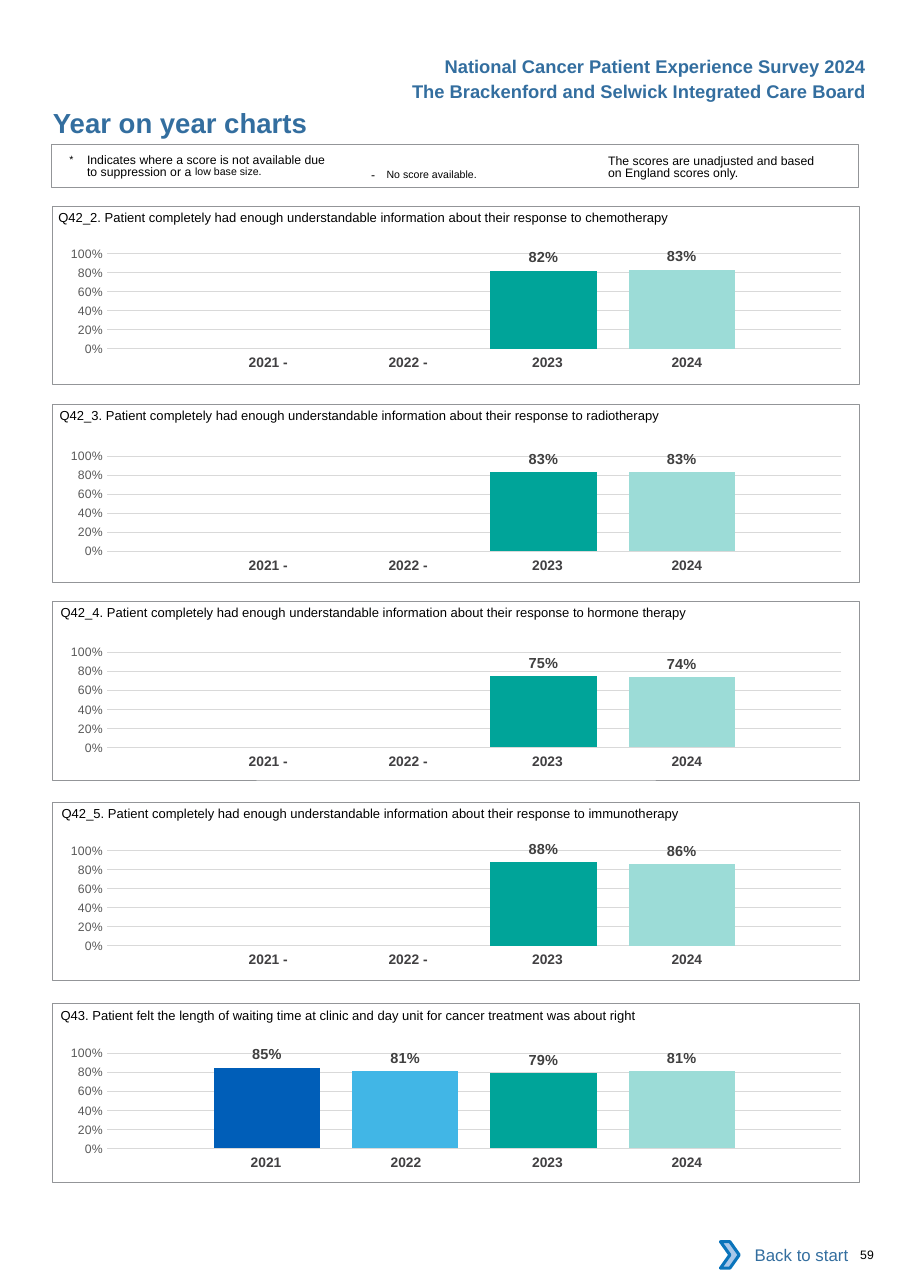
"""Build the year on year charts page of a patient experience survey."""
from lxml.etree import SubElement
from pptx import Presentation
from pptx.chart.data import CategoryChartData
from pptx.dml.color import RGBColor
from pptx.enum.chart import XL_CHART_TYPE as CHART, XL_LABEL_POSITION as LABEL, XL_TICK_MARK as TICK
from pptx.enum.shapes import MSO_SHAPE as SHAPE
from pptx.enum.text import MSO_ANCHOR as ANCHOR, PP_ALIGN as ALIGN
from pptx.oxml import parse_xml
from pptx.oxml.ns import nsdecls, qn
from pptx.util import Inches, Pt

CELL = Inches(0.1)
COLS, ROWS = 82.6, 116.9
PANEL_LEFT, PANEL_W, PANEL_H = 4.8, 73.2, 16.2
CHART_LEFT, CHART_H, YEARS_DROP = 3.9, 12.9, 10.55
YEARS_LEFT, YEAR_COLS, YEAR_H = 17.3, (12.7, 12.7, 13.4, 12.7), 2.7
PLOT = {"x": 0.08, "y": 0.14, "w": 0.91, "h": 0.67}

BLACK = RGBColor(0, 0, 0)
WHITE = RGBColor(255, 255, 255)
HEADING = RGBColor(0x33, 0x6E, 0x9F)
FRAME = RGBColor(0x93, 0x95, 0x98)
YEAR = RGBColor(0x41, 0x40, 0x42)
AXIS = RGBColor(0x59, 0x59, 0x59)
LABELS = RGBColor(0x40, 0x40, 0x40)
GRID = RGBColor(0xD9, 0xD9, 0xD9)
CHEVRON = RGBColor(0xA8, 0xC7, 0xE9)
CHEVRON_LINE = RGBColor(0x0A, 0x74, 0xBB)
BARS = (RGBColor(0x00, 0x5E, 0xB8), RGBColor(0x41, 0xB6, 0xE6),
        RGBColor(0x00, 0xA4, 0x99), RGBColor(0x9C, 0xDC, 0xD7))

INFO = "Patient completely had enough understandable information about their response to "
PANELS = (
    (18.7, 21.2, 5.3, 72.1, "Q42_2. " + INFO + "chemotherapy", (None, None, 0.82, 0.83)),
    (36.7, 39.6, 5.4, 70.8, "Q42_3. " + INFO + "radiotherapy", (None, None, 0.83, 0.83)),
    (54.6, 57.4, 5.5, 72.4, "Q42_4. " + INFO + "hormone therapy", (None, None, 0.75, 0.74)),
    (72.8, 75.4, 5.6, 72.6, "Q42_5. " + INFO + "immunotherapy", (None, None, 0.88, 0.86)),
    (91.1, 93.8, 5.5, 57.2, "Q43. Patient felt the length of waiting time at clinic and day unit "
     "for cancer treatment was about right", (0.85, 0.81, 0.79, 0.81)),
)


def place(*cells):
    """Turn grid columns and rows into lengths."""
    return [int(c * CELL) for c in cells]


def set_font(font, size, color, bold=False, name="Arial"):
    """Format a font."""
    for key, value in {"size": Pt(size), "bold": bold, "name": name}.items():
        setattr(font, key, value)
    font.color.rgb = color


def fill_text(tf, runs, size, color=BLACK, bold=False, align=ALIGN.LEFT,
              anchor=ANCHOR.TOP, insets=(0, 0, 0, 0), leading=None):
    """Write (text, extras) runs as one paragraph; extras may override the size."""
    frame = {"word_wrap": True, "vertical_anchor": anchor}
    sides = ("margin_left", "margin_top", "margin_right", "margin_bottom")
    frame.update(zip(sides, place(*insets)))
    for key, value in frame.items():
        setattr(tf, key, value)
    p = tf.paragraphs[0]
    p.alignment = align
    if leading:
        p.line_spacing = Pt(leading)
    for text, extras in runs:
        r = p.add_run()
        r.text = text
        set_font(r.font, extras.get("size", size), color, bold)
        for key in ("baseline", "spc"):
            if key in extras:
                r._r.get_or_add_rPr().set(key, str(extras[key]))
    return p


def add_text(s, box, runs, size, **style):
    """Add a text box on the grid."""
    return fill_text(s.shapes.add_textbox(*place(*box)).text_frame, runs, size, **style)


def add_block(s, kind, box, fill=None, line=None, width=0.5):
    """Add a preset shape with optional fill and line."""
    sp = s.shapes.add_shape(kind, *place(*box))
    sp.shadow.inherit = False
    for part, color in ((sp.fill, fill), (sp.line.fill, line)):
        if color is None:
            part.background()
        else:
            part.solid()
            part.fore_color.rgb = color
    if line is not None:
        sp.line.width = Pt(width)
    return sp


def add_years(s, top, values):
    """Add the row of years, with a dash where there is no score."""
    box = place(YEARS_LEFT, top, sum(YEAR_COLS), YEAR_H)
    table = s.shapes.add_table(1, len(YEAR_COLS), *box).table
    table.first_row = table.horz_banding = False
    for i, (width, value) in enumerate(zip(YEAR_COLS, values)):
        table.columns[i].width = place(width)[0]
        cell = table.cell(0, i)
        cell.fill.background()
        left = 1.4 if value is None else 1
        insets = (left, 0.5, (0, 0, 0.4, 1.2)[i], 0.5)
        names = ("margin_left", "margin_top", "margin_right", "margin_bottom")
        for key, margin in zip(names, place(*insets)):
            setattr(cell, key, margin)
        p = cell.text_frame.paragraphs[0]
        p.alignment = ALIGN.CENTER
        r = p.add_run()
        r.text = f"{2021 + i}" + (" -" if value is None else "")
        set_font(r.font, 9, YEAR, True)


def fix_plot(chart):
    """Clear the chart background and pin the inner plot area."""
    space = chart._chartSpace
    space.find(qn("c:chart")).addnext(parse_xml(
        f'<c:spPr {nsdecls("c", "a")}><a:noFill/><a:ln><a:noFill/></a:ln></c:spPr>'))
    area = space.find(qn("c:chart")).find(qn("c:plotArea"))
    for old in area.findall(qn("c:layout")):
        area.remove(old)
    layout = parse_xml(f'<c:layout {nsdecls("c")}/>')
    area.insert(0, layout)
    manual = SubElement(layout, qn("c:manualLayout"))
    modes = {"layoutTarget": "inner", "xMode": "edge", "yMode": "edge"}
    for tag, value in {**modes, **PLOT}.items():
        SubElement(manual, qn(f"c:{tag}")).set("val", str(value))


def add_scores(s, top, values):
    """Add the column chart with one series per year."""
    data = CategoryChartData(number_format="0%")
    data.categories = ["1"]
    for i, value in enumerate(values, 1):
        data.add_series(f"Series {i}", [value])
    box = place(CHART_LEFT, top, PANEL_W, CHART_H)
    chart = s.shapes.add_chart(CHART.COLUMN_CLUSTERED, *box, data).chart
    chart.has_title = chart.has_legend = False
    set_font(chart.font, 10, BLACK, name="Calibri")
    chart.category_axis.visible = False
    axis = chart.value_axis
    scale = {"minimum_scale": 0, "maximum_scale": 1, "major_unit": 0.2,
             "major_tick_mark": TICK.NONE, "minor_tick_mark": TICK.NONE}
    for key, value in scale.items():
        setattr(axis, key, value)
    axis.format.line.fill.background()
    axis.major_gridlines.format.line.color.rgb = GRID
    axis.major_gridlines.format.line.width = Pt(0.75)
    set_font(axis.tick_labels.font, 8, AXIS)
    plot = chart.plots[0]
    for key, value in {"gap_width": 200, "overlap": -30, "vary_by_categories": False}.items():
        setattr(plot, key, value)
    for series, color in zip(plot.series, BARS):
        series.format.fill.solid()
        series.format.fill.fore_color.rgb = color
        labels = series.data_labels
        set_font(labels.font, 9.5, LABELS, True)
        form = {"show_value": True, "position": LABEL.OUTSIDE_END,
                "number_format": "0%", "number_format_is_linked": False}
        for key, value in form.items():
            setattr(labels, key, value)
    fix_plot(chart)


def add_panel(s, top, chart_top, text_left, text_w, question, values):
    """Add one question with its years, chart and frame."""
    add_text(s, (text_left, top - 0.6, text_w, 2.4), [(question, {})], 8.5, insets=(0, 0.9, 0, 0))
    add_years(s, chart_top + YEARS_DROP, values)
    add_scores(s, chart_top, values)
    add_block(s, SHAPE.RECTANGLE, (PANEL_LEFT, top, PANEL_W, PANEL_H), line=FRAME)


def add_notes_bar(s):
    """Add the framed notes on how to read the scores."""
    add_text(s, (55.2, 13.8, 20.1, 2.7), [("The scores are unadjusted and based on England scores only.", {})],
             8, insets=(0, 0.3, 0.5, 0), leading=8.1)
    add_text(s, (32.7, 14.1, 18.3, 2.4),
             [("- ", {"spc": 260}), ("No score available.", {"size": 12, "baseline": 3000})],
             8, insets=(1, 0.5, 1, 0.5))
    p = add_text(s, (6.3, 13.8, 27.2, 2.7),
                 [("*\t", {"size": 12, "baseline": 3000}),
                  ("Indicates where a score is not available due to suppression or a ", {}),
                  ("low base size.", {"size": 12, "baseline": 7000})],
                 8, insets=(0, 0.3, 3.3, 0), leading=8.1)
    indent = place(1.6)[0]
    for key, value in {"marL": indent, "indent": -indent}.items():
        p._p.get_or_add_pPr().set(key, str(value))
    add_block(s, SHAPE.RECTANGLE, (4.7, 13.1, PANEL_W, 3.9), line=FRAME, width=0.75)


def main():
    """Build and save the slide."""
    prs = Presentation()
    prs.slide_width, prs.slide_height = place(COLS, ROWS)
    s = prs.slides.add_slide(prs.slide_layouts[5])
    title = s.shapes.title
    for key, value in zip(("left", "top", "width", "height"), place(4.8, 9.6, 45, 3)):
        setattr(title, key, value)
    fill_text(title.text_frame, [("Year on year charts", {})], 18, color=HEADING, bold=True)
    for panel in PANELS:
        add_panel(s, *panel)
    add_notes_bar(s)
    for top, text in ((4.5, "National Cancer Patient Experience Survey 2024"),
                      (6.8, "The Brackenford and Selwick Integrated Care Board")):
        add_text(s, (33.6, top, 46, 3), [(text, {})], 12, color=HEADING, bold=True,
                 align=ALIGN.RIGHT, insets=(1, 0.5, 1, 0.5))
    back = add_block(s, SHAPE.RECTANGLE, (66.2, 111.8, 11.8, 4.2), fill=WHITE)
    fill_text(back.text_frame, [("Back to start", {})], 11, color=HEADING, align=ALIGN.RIGHT,
              anchor=ANCHOR.MIDDLE, insets=(1, 0.5, 1, 0.5))
    add_block(s, SHAPE.CHEVRON, (65.4, 112.7, 1.7, 2.4), CHEVRON, CHEVRON_LINE, 2)
    add_text(s, (77.1, 113.2, 5.1, 1.3), [("59", {})], 8, insets=(1, 0, 0, 0))
    prs.save("out.pptx")


if __name__ == "__main__":
    main()
